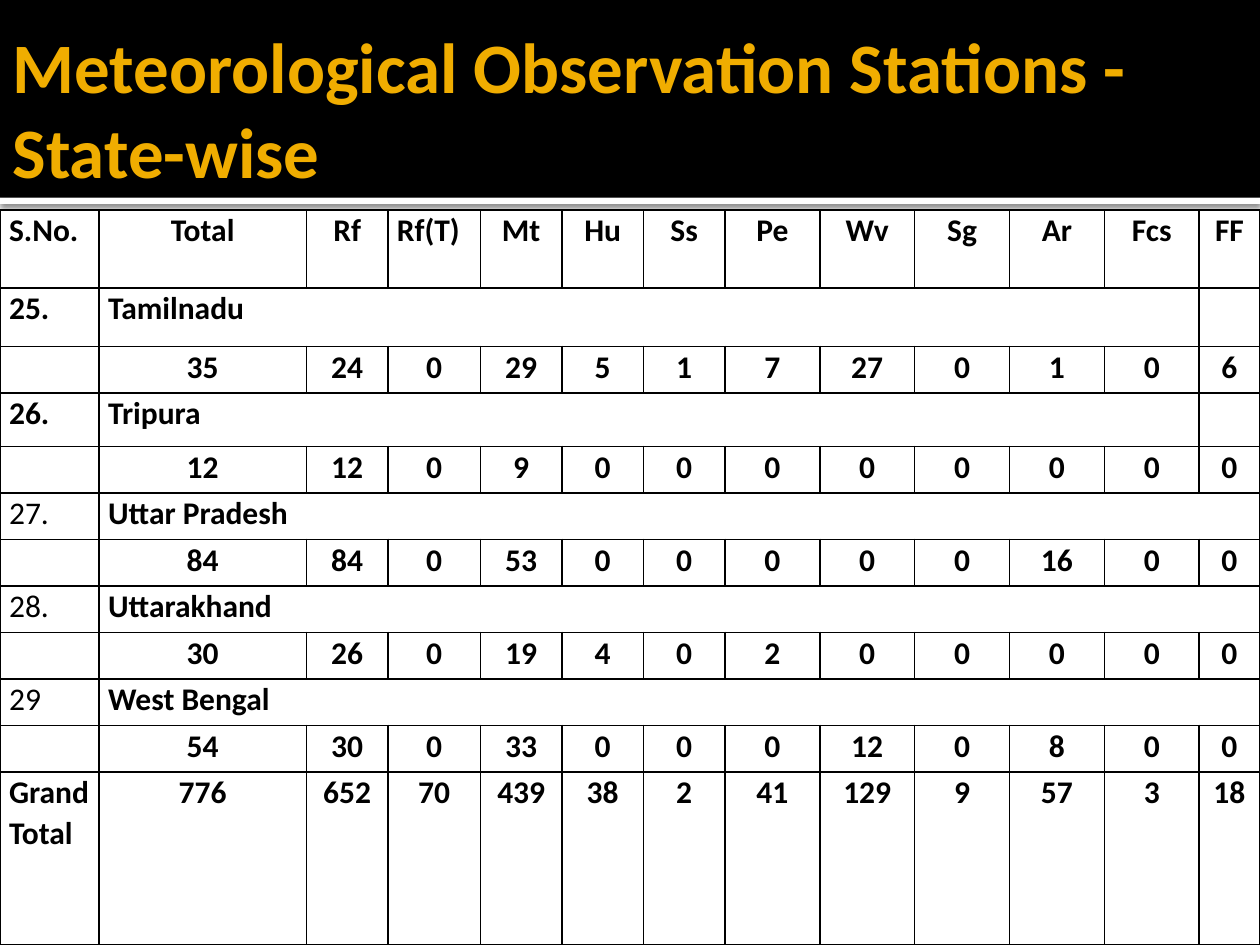
from lxml.etree import SubElement
from pptx import Presentation
from pptx.dml.color import RGBColor
from pptx.enum.shapes import MSO_SHAPE
from pptx.enum.text import MSO_ANCHOR, MSO_AUTO_SIZE, PP_ALIGN
from pptx.oxml import parse_xml
from pptx.oxml.ns import nsdecls, qn
from pptx.util import Pt

# Content
TITLE = "Meteorological Observation Stations - State-wise"
HEADERS = ["S.No.", "Total", "Rf", "Rf(T)", "Mt", "Hu", "Ss", "Pe", "Wv", "Sg", "Ar", "Fcs", "FF"]
# number, number is bold, state, columns its name spans, station counts
STATES = [
    ("25.", True, "Tamilnadu", 11, [35, 24, 0, 29, 5, 1, 7, 27, 0, 1, 0, 6]),
    ("26.", True, "Tripura", 11, [12, 12, 0, 9, 0, 0, 0, 0, 0, 0, 0, 0]),
    ("27.", False, "Uttar Pradesh", 12, [84, 84, 0, 53, 0, 0, 0, 0, 0, 16, 0, 0]),
    ("28.", False, "Uttarakhand", 12, [30, 26, 0, 19, 4, 0, 2, 0, 0, 0, 0, 0]),
    ("29", False, "West Bengal", 12, [54, 30, 0, 33, 0, 0, 0, 12, 0, 8, 0, 0]),
]
GRAND_TOTAL = ["Grand Total", 776, 652, 70, 439, 38, 2, 41, 129, 9, 57, 3, 18]

# Theme and measures, in points
THEME = {
    "font": "Calibri", "title_size": 40.5, "table_size": 18, "line_spacing": 1.05,
    "title": "F0AD00", "text": "000000", "banner": "000000", "band": "FFFFFF", "border": "000000",
}
WIDTH, HEIGHT = 720, 540
BANNER_HEIGHT, BAND_HEIGHT = 113, 3.6
TABLE_TOP = 120
COLUMNS = [56.6, 118.5, 46.6, 52.9] + [46.6] * 3 + [54.2] * 5
COLUMNS.append(WIDTH - sum(COLUMNS))
ROWS = [44.6, 33.3, 26.6, 30.6] + [26.6] * 7
ROWS.append(HEIGHT - TABLE_TOP - sum(ROWS))


def write(frame, text, size, color, bold=True, align=PP_ALIGN.LEFT, spacing=None):
    paragraph = frame.paragraphs[0]
    paragraph.alignment = align
    paragraph.line_spacing = spacing
    paragraph.font.size = Pt(size)
    run = paragraph.add_run()
    run.text = str(text)
    run.font.name = THEME["font"]
    run.font.size = Pt(size)
    run.font.bold = bold
    run.font.color.rgb = RGBColor.from_string(color)


def write_cell(cell, text, bold=True, align=PP_ALIGN.LEFT):
    write(cell.text_frame, text, THEME["table_size"], THEME["text"], bold=bold,
          align=align, spacing=THEME["line_spacing"])


def write_row(table, row, label, values):
    if label:
        write_cell(table.cell(row, 0), label)
    for column, value in enumerate(values, start=1):
        # The Rf(T) heading is the only value set to the left
        align = PP_ALIGN.LEFT if value == "Rf(T)" else PP_ALIGN.CENTER
        write_cell(table.cell(row, column), value, align=align)


def format_cell(cell):
    cell.margin_left = cell.margin_right = Pt(5.2)
    cell.margin_top = cell.margin_bottom = 0
    cell.vertical_anchor = MSO_ANCHOR.TOP
    if not cell.text_frame.text:
        end = cell.text_frame.paragraphs[0]._p.get_or_add_endParaRPr()
        end.set("sz", str(THEME["table_size"] * 100))
    properties = cell._tc.get_or_add_tcPr()
    for side in ("lnL", "lnR", "lnT", "lnB"):
        line = SubElement(properties, qn(f"a:{side}"), w=str(Pt(1)))
        fill = SubElement(line, qn("a:solidFill"))
        SubElement(fill, qn("a:srgbClr"), val=THEME["border"])
    cell.fill.background()


def add_bar(slide, top, height, color):
    bar = slide.shapes.add_shape(MSO_SHAPE.RECTANGLE, 0, Pt(top), Pt(WIDTH), Pt(height))
    bar.shadow.inherit = False
    bar.fill.solid()
    bar.fill.fore_color.rgb = RGBColor.from_string(color)
    bar.line.fill.background()
    return bar


def add_shadow(shape):
    effects = shape._element.spPr.find(qn("a:effectLst"))
    effects.append(parse_xml(
        f'<a:outerShdw {nsdecls("a")} blurRad="{Pt(2.5)}" dist="{Pt(0.8)}" dir="5400000">'
        '<a:srgbClr val="000000"><a:alpha val="60000"/></a:srgbClr></a:outerShdw>'))


def add_station_table(slide):
    frame = slide.shapes.add_table(len(ROWS), len(COLUMNS), 0, Pt(TABLE_TOP),
                                   Pt(WIDTH), Pt(HEIGHT - TABLE_TOP))
    table = frame.table
    table.first_row = table.horz_banding = False
    for column, width in zip(table.columns, COLUMNS):
        column.width = Pt(width)
    for row, height in zip(table.rows, ROWS):
        row.height = Pt(height)

    write_row(table, 0, HEADERS[0], HEADERS[1:])
    for index, (number, bold, state, span, counts) in enumerate(STATES):
        row = 1 + 2 * index
        table.cell(row, 1).merge(table.cell(row, span))
        write_cell(table.cell(row, 0), number, bold=bold)
        write_cell(table.cell(row, 1), state)
        write_row(table, row + 1, "", counts)
    write_row(table, len(ROWS) - 1, GRAND_TOTAL[0], GRAND_TOTAL[1:])
    for cell in table.iter_cells():
        format_cell(cell)


def add_title(slide):
    title = slide.shapes.title
    title.left, title.top, title.width, title.height = 0, Pt(12), Pt(WIDTH), Pt(99)
    frame = title.text_frame
    frame.word_wrap = True
    frame.auto_size = MSO_AUTO_SIZE.NONE
    frame.vertical_anchor = MSO_ANCHOR.MIDDLE
    frame.margin_left = Pt(7.2)
    frame.margin_right = frame.margin_top = frame.margin_bottom = Pt(3.6)
    write(frame, TITLE, THEME["title_size"], THEME["title"])
    # Bring the title in front of the banner
    title.element.getparent().append(title.element)


def main():
    presentation = Presentation()
    presentation.slide_width, presentation.slide_height = Pt(WIDTH), Pt(HEIGHT)
    slide = presentation.slides.add_slide(presentation.slide_layouts[5])

    # Banner with the shadowed band below it
    add_shadow(add_bar(slide, BANNER_HEIGHT, BAND_HEIGHT, THEME["band"]))
    add_bar(slide, 0, BANNER_HEIGHT, THEME["banner"])

    add_station_table(slide)
    add_title(slide)
    presentation.save("out.pptx")


if __name__ == "__main__":
    main()
